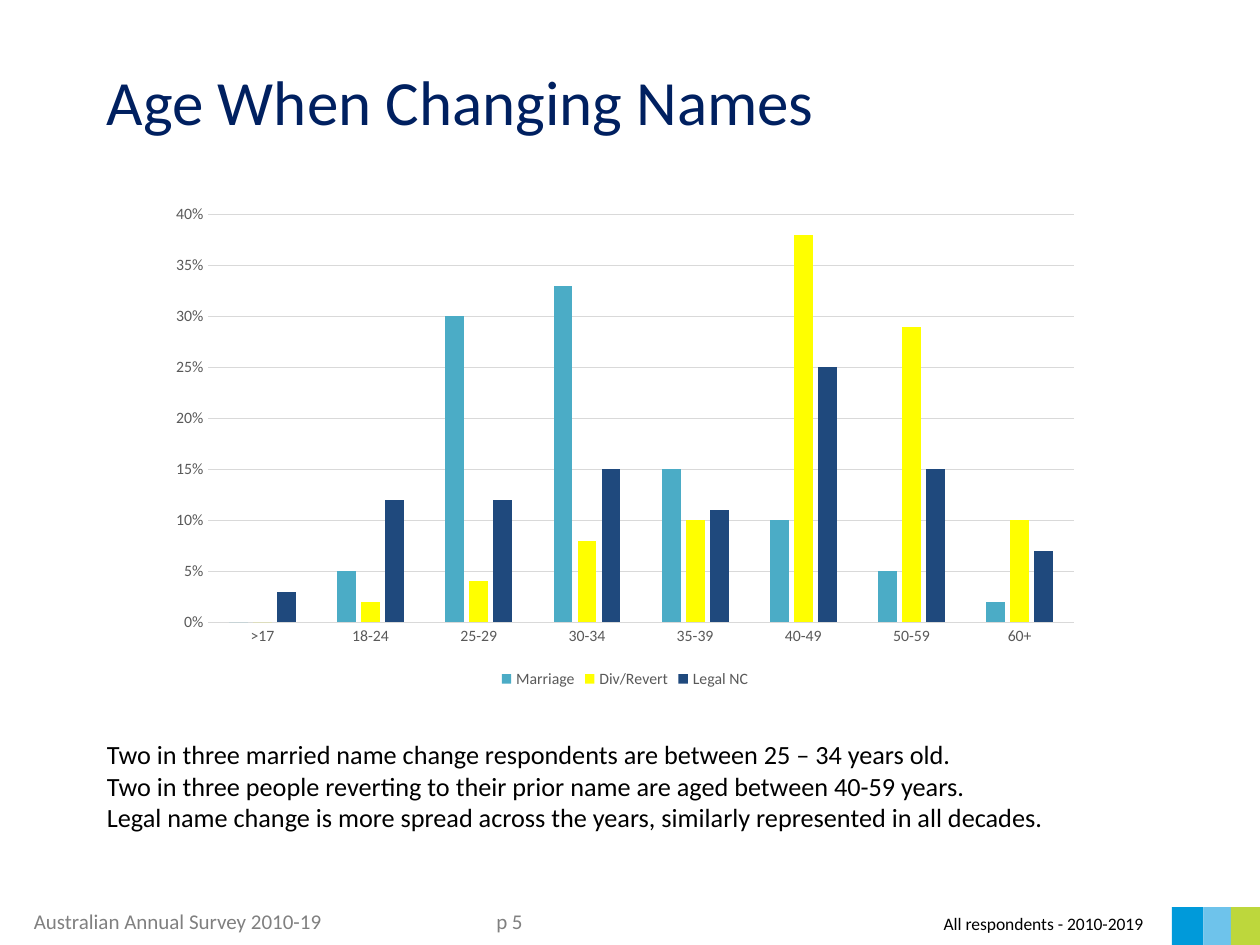
from lxml.etree import SubElement
from pptx import Presentation
from pptx.chart.data import CategoryChartData
from pptx.dml.color import RGBColor
from pptx.enum.chart import XL_CHART_TYPE, XL_LEGEND_POSITION, XL_TICK_MARK
from pptx.enum.shapes import MSO_SHAPE
from pptx.enum.text import MSO_ANCHOR, PP_ALIGN
from pptx.oxml.ns import qn
from pptx.util import Inches, Pt

WIDE, HIGH = Inches(10), Inches(7.5)
FONT = "Calibri"
HUES = {
    "navy": "002060", "black": "000000", "foot": "808080",
    "label": "595959", "grid": "D9D9D9",
    "blue": "009ADA", "sky": "6EC3EB", "lime": "BDD73C",
    "teal": "4BACC6", "yellow": "FFFF00", "dark": "1F497D",
}
AGES = [">17", "18-24", "25-29", "30-34", "35-39", "40-49", "50-59", "60+"]
SERIES = [
    ("Marriage", "teal", [0, 0.05, 0.3, 0.33, 0.15, 0.1, 0.05, 0.02]),
    ("Div/Revert", "yellow", [0, 0.02, 0.04, 0.08, 0.1, 0.38, 0.29, 0.1]),
    ("Legal NC", "dark", [0.03, 0.12, 0.12, 0.15, 0.11, 0.25, 0.15, 0.07]),
]
NOTES = [
    "Two in three married name change respondents are between 25 – 34 years old.",
    "Two in three people reverting to their prior name are aged between 40-59 years.",
    "Legal name change is more spread across the years, similarly represented in all decades.",
]


def hue(name):
    """Return the named colour."""
    return RGBColor.from_string(HUES[name])


def area(x, y, w, h):
    """Turn percent shares of the slide into a box of lengths."""
    return [round(part * side / 100)
            for part, side in zip((x, y, w, h), (WIDE, HIGH) * 2)]


def style(font, size, color):
    """Set face, size and colour of a font."""
    font.name, font.size = FONT, Pt(size)
    font.color.rgb = hue(color)


def add_text(slide, box, lines, size, color, align=PP_ALIGN.LEFT,
             anchor=MSO_ANCHOR.TOP, tab=None):
    """Add a text box with one paragraph per line."""
    frame = slide.shapes.add_textbox(*area(*box)).text_frame
    frame.word_wrap = True
    frame.vertical_anchor = anchor
    frame.text = "\n".join(lines)
    for para in frame.paragraphs:
        para.alignment = align
        if tab:
            stops = SubElement(para._p.get_or_add_pPr(), qn("a:tabLst"))
            SubElement(stops, qn("a:tab"), pos=str(Inches(tab)), algn="l")
        for run in para.runs:
            style(run.font, size, color)


def add_block(slide, box, color):
    """Add a plain filled rectangle."""
    block = slide.shapes.add_shape(MSO_SHAPE.RECTANGLE, *area(*box))
    block.shadow.inherit = False
    block.fill.solid()
    block.fill.fore_color.rgb = hue(color)
    block.line.fill.background()


def set_line(line, color):
    """Give a chart line its thin stroke."""
    line.color.rgb = hue(color)
    line.width = Pt(0.75)


def style_axes(chart):
    """Format both axes and the gridlines."""
    ages, share = chart.category_axis, chart.value_axis
    for axis in (ages, share):
        axis.major_tick_mark = axis.minor_tick_mark = XL_TICK_MARK.NONE
        style(axis.tick_labels.font, 9, "label")
    set_line(ages.format.line, "grid")
    share.format.line.fill.background()
    set_line(share.major_gridlines.format.line, "grid")
    share.minimum_scale, share.maximum_scale, share.major_unit = 0, 0.4, 0.05
    share.tick_labels.number_format = "0%"
    share.tick_labels.number_format_is_linked = False


def add_columns(slide, box):
    """Add the clustered column chart of ages."""
    data = CategoryChartData(number_format="0%")
    data.categories = AGES
    for name, _, vals in SERIES:
        data.add_series(name, vals)
    chart = slide.shapes.add_chart(
        XL_CHART_TYPE.COLUMN_CLUSTERED, *area(*box), data).chart
    style(chart.font, 10, "black")
    chart.has_title = False
    chart.has_legend = True
    chart.legend.position = XL_LEGEND_POSITION.BOTTOM
    chart.legend.include_in_layout = False
    style(chart.legend.font, 9, "label")
    style_axes(chart)
    plot = chart.plots[0]
    plot.gap_width, plot.overlap, plot.vary_by_categories = 219, -27, False
    for series, (_, color, _) in zip(plot.series, SERIES):
        series.format.fill.solid()
        series.format.fill.fore_color.rgb = hue(color)


def main():
    """Build the slide and save it."""
    deck = Presentation()
    deck.slide_width, deck.slide_height = WIDE, HIGH
    slide = deck.slides.add_slide(deck.slide_layouts[6])
    add_text(slide, (1.7, 95.47, 80.8, 4),
             ["Australian Annual Survey 2010-19\tp 5"], 12, "foot", tab=3.67)
    for left, wide, color in ((93, 2.5, "blue"), (95.5, 2.2, "sky"),
                              (97.7, 2.3, "lime")):
        add_block(slide, (left, 96, wide, 4), color)
    add_text(slide, (7.5, 2.27, 90, 16.67), ["Age When Changing Names"],
             36, "navy", anchor=MSO_ANCHOR.MIDDLE)
    add_text(slide, (7.5, 77.47, 92.5, 11.47), NOTES, 15, "black")
    add_columns(slide, (12.5, 20.67, 74.2, 52.67))
    add_text(slide, (69.2, 96, 22.5, 3.6), ["All respondents - 2010-2019"],
             10, "black", align=PP_ALIGN.RIGHT)
    deck.save("out.pptx")


if __name__ == "__main__":
    main()
